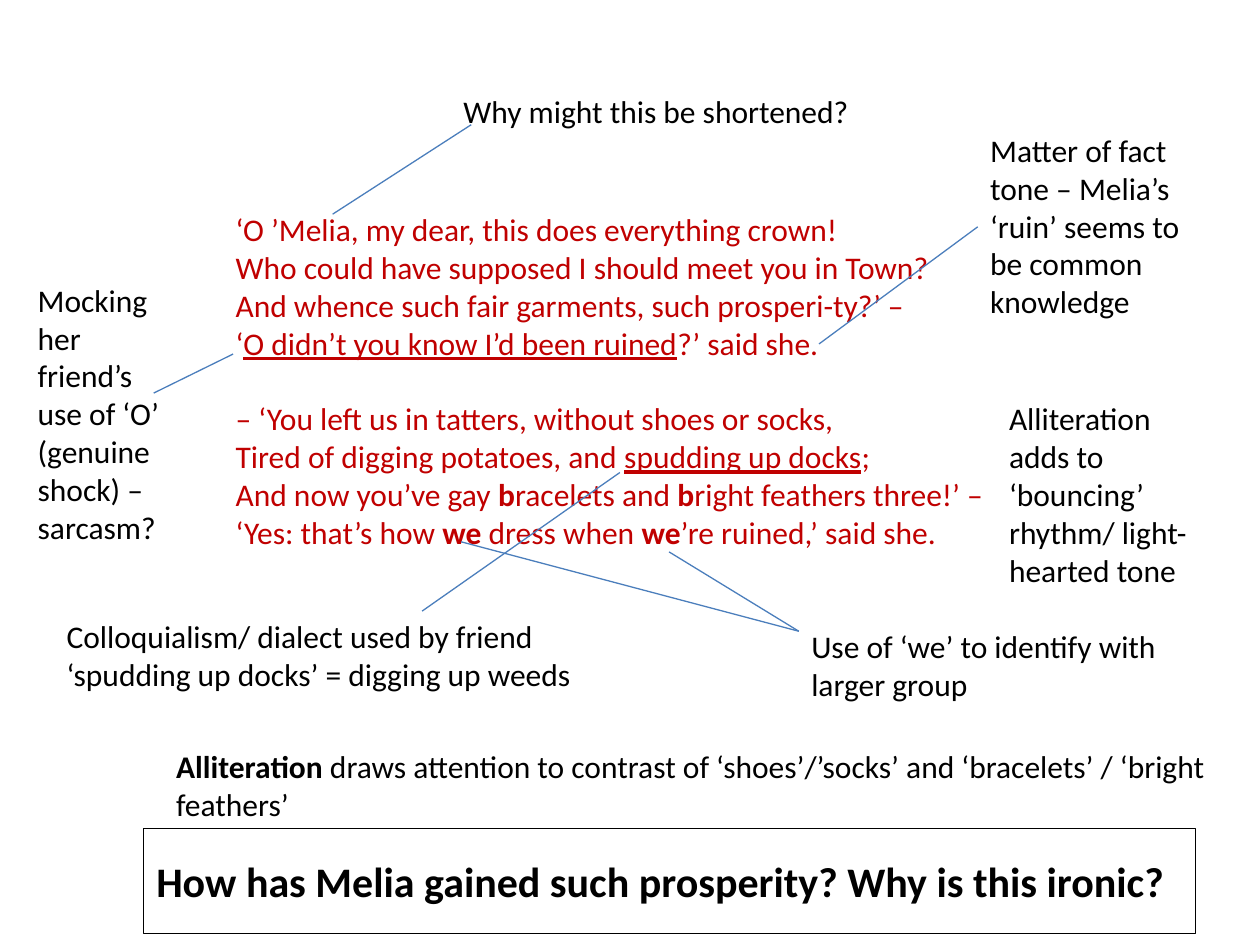
from dataclasses import dataclass

from pptx import Presentation
from pptx.dml.color import RGBColor
from pptx.enum import shapes, text
from pptx.oxml import xmlchemy
from pptx.util import Inches, Pt
from lxml import etree


@dataclass(frozen=True)
class Theme:
    font: str = "Calibri"
    ink: RGBColor = RGBColor(0x00, 0x00, 0x00)
    verse: RGBColor = RGBColor(0xC0, 0x00, 0x00)
    pointer: RGBColor = RGBColor(0x4B, 0x7E, 0xBC)
    body_size: int = 18
    question_size: int = 24
    line_width: float = 0.75


THEME = Theme()
DRAWING = "{http://schemas.openxmlformats.org/drawingml/2006/main}"


def write(frame, lines, color=THEME.ink, size=THEME.body_size, bold=False,
          wrap=True, gap_before=None):
    """Each line is a list of runs: plain text, or (text, "b") / (text, "u")."""
    frame.word_wrap = wrap
    frame.auto_size = text.MSO_AUTO_SIZE.SHAPE_TO_FIT_TEXT
    for number, line in enumerate(lines):
        paragraph = frame.paragraphs[0] if number == 0 else frame.add_paragraph()
        paragraph.alignment = text.PP_ALIGN.LEFT
        paragraph.space_before = Pt(size * 1.2 if number == gap_before else 0)
        for part in line:
            words, style = (part, "") if isinstance(part, str) else part
            run = paragraph.add_run()
            run.text = words
            run.font.name = THEME.font
            run.font.size = Pt(size)
            run.font.color.rgb = color
            run.font.bold = bold or style == "b"
            run.font.underline = style == "u"


def place(part, left, top, width, height):
    part.left, part.top = Inches(left), Inches(top)
    part.width, part.height = Inches(width), Inches(height)


deck = Presentation()
deck.slide_width, deck.slide_height = Inches(10), Inches(7.5)
slide = deck.slides.add_slide(deck.slide_layouts[1])

# Closing question, in the title placeholder
question = slide.shapes.title
place(question, 1.14, 6.74, 8.35, 0.5)
question.line.color.rgb = THEME.ink
question.line.width = Pt(THEME.line_width)
write(question.text_frame,
      [["How has Melia gained such prosperity? Why is this ironic?"]],
      size=THEME.question_size, bold=True, wrap=False)

# The two stanzas, in the body placeholder without bullets
poem = slide.placeholders[1]
place(poem, 1.77, 1.62, 6.38, 2.83)
write(poem.text_frame, [
    ["‘O ’Melia, my dear, this does everything crown!"],
    ["Who could have supposed I should meet you in Town?"],
    ["And whence such fair garments, such prosperi-ty?’ –"],
    ["‘", ("O didn’t you know I’d been ruined", "u"), "?’ said she."],
    ["– ‘You left us in tatters, without shoes or socks,"],
    ["Tired of digging potatoes, and ", ("spudding up docks", "u"), ";"],
    ["And now you’ve gay ", ("b", "b"), "racelets and ", ("b", "b"),
     "right feathers three!’ –"],
    ["‘Yes: that’s how ", ("we", "b"), " dress when ", ("we", "b"),
     "’re ruined,’ said she."],
], color=THEME.verse, gap_before=4)
for verse_line in poem.text_frame.paragraphs:
    properties = verse_line._p.get_or_add_pPr()
    properties.set("marL", "0")
    properties.set("indent", "0")
    etree.SubElement(properties, DRAWING + "buNone")

# Notes around the poem: box, lines, wrapping
notes = {
    "mocking": ((0.2, 2.18, 1.18, 2.22), [
        ["Mocking her friend’s use of ‘O’ (genuine shock) – sarcasm?"]], True),
    "bouncing": ((7.91, 3.12, 1.81, 1.62), [
        ["Alliteration adds to ‘bouncing’ rhythm/ light-hearted tone"]], True),
    "shortened": ((3.58, 0.68, 3.3, 0.4), [
        ["Why might this be shortened?"]], False),
    "tone": ((7.76, 0.99, 1.89, 1.62), [
        ["Matter of fact tone – Melia’s ‘ruin’ seems to be common knowledge"]], True),
    "dialect": ((0.43, 4.85, 4.25, 0.71), [
        ["Colloquialism/ dialect used by friend"],
        ["‘spudding up docks’ = digging up weeds"]], True),
    "we": ((6.34, 4.93, 3.31, 0.71), [
        ["Use of ‘we’ to identify with larger group"]], True),
    "contrast": ((1.3, 5.88, 8.43, 0.71), [
        [("Alliteration", "b"), " draws attention to contrast of ‘shoes’/’socks’ "
         "and ‘bracelets’ / ‘bright feathers’"]], True),
}
note_boxes = {}
for topic, (box, lines, wrap) in notes.items():
    note_boxes[topic] = slide.shapes.add_textbox(*map(Inches, box))
    write(note_boxes[topic].text_frame, lines, wrap=wrap)

# Pointers between notes and verse: start, end, note joined at its left side
pointers = [
    ((1.85, 2.81), (1.22, 3.12), None),
    ((2.64, 1.7), (3.74, 0.99), None),
    ((7.76, 1.8), (6.5, 2.73), "tone"),
    ((3.35, 4.85), (4.92, 3.75), None),
    ((5.31, 4.38), (6.34, 5.01), None),
    ((3.66, 4.3), (6.34, 5.01), None),
]
for start, end, joined_note in pointers:
    pointer = slide.shapes.add_connector(
        shapes.MSO_CONNECTOR.STRAIGHT, *map(Inches, start + end))
    pointer.line.color.rgb = THEME.pointer
    pointer.line.width = Pt(THEME.line_width)
    etree.SubElement(pointer._element.spPr, DRAWING + "effectLst")
    if joined_note:
        pointer.begin_connect(note_boxes[joined_note], 1)

deck.save("out.pptx")
